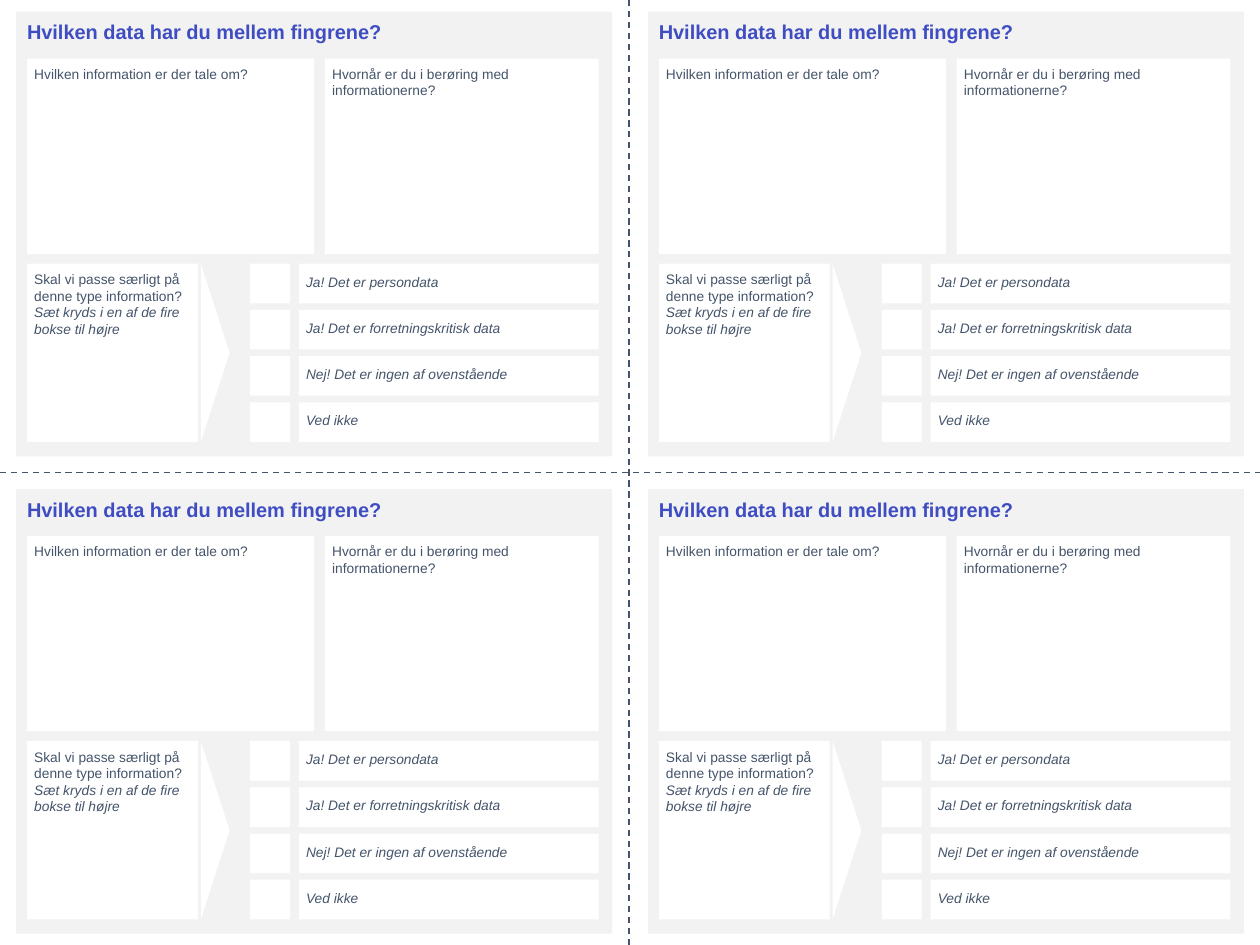
from dataclasses import dataclass
from itertools import product

from lxml import etree
from pptx import Presentation
from pptx.dml.color import RGBColor
from pptx.enum.dml import MSO_LINE
from pptx.enum.shapes import MSO_CONNECTOR, MSO_SHAPE
from pptx.enum.text import MSO_ANCHOR, MSO_AUTO_SIZE, PP_ALIGN
from pptx.oxml.ns import qn
from pptx.util import Inches, Pt

RECT = MSO_SHAPE.RECTANGLE
TRIANGLE = MSO_SHAPE.ISOSCELES_TRIANGLE
STRAIGHT = MSO_CONNECTOR.STRAIGHT
DASH = MSO_LINE.DASH
TOP, MIDDLE = MSO_ANCHOR.TOP, MSO_ANCHOR.MIDDLE
LEFT = PP_ALIGN.LEFT
GROW = MSO_AUTO_SIZE.SHAPE_TO_FIT_TEXT


@dataclass(frozen=True)
class Theme:
    """Colours, type and insets of the slide."""

    card: RGBColor = RGBColor.from_string("F3F2F2")
    field: RGBColor = RGBColor.from_string("FFFFFF")
    title: RGBColor = RGBColor.from_string("3F4DC2")
    text: RGBColor = RGBColor.from_string("44546A")
    font: str = "Arial"
    title_size: Pt = Pt(16)
    text_size: Pt = Pt(11)
    line_width: Pt = Pt(1.25)
    field_insets: tuple = (0.08, 0.08, 0.08, 0.2)
    answer_insets: tuple = (0.08, 0.16, 0.16, 0.2)


@dataclass(frozen=True)
class Box:
    """An area divided into 100 columns and 100 rows."""

    x: float
    y: float
    w: float
    h: float

    def area(self, col, row, cols, rows):
        """Return the box that covers the given columns and rows."""
        cw, rh = self.w / 100, self.h / 100
        return Box(self.x + col * cw, self.y + row * rh, cols * cw, rows * rh)

    def emu(self):
        """Return left, top, width and height as whole lengths."""
        return [round(v) for v in (self.x, self.y, self.w, self.h)]


THEME = Theme()
CARD_COLS = (1.29, 51.43)
CARD_ROWS = (1.24, 51.76)
CARD_SIZE = (47.29, 47.05)
ANSWERS = (
    "Ja! Det er persondata",
    "Ja! Det er forretningskritisk data",
    "Nej! Det er ingen af ovenstående",
    "Ved ikke",
)


def write(tf, runs, size, color, insets, anchor=TOP, bold=False):
    """Fill a text frame with (text, italic) runs."""
    tf.word_wrap = True
    tf.vertical_anchor = anchor
    tf.margin_left, tf.margin_top, tf.margin_right, tf.margin_bottom = map(Inches, insets)
    p = tf.paragraphs[0]
    p.alignment = LEFT
    for text, italic in runs:
        r = p.add_run()
        r.text = text
        r.font.name = THEME.font
        r.font.size = size
        r.font.color.rgb = color
        r.font.bold = bold
        r.font.italic = italic


def add_panel(s, box, color=THEME.field, kind=RECT):
    """Add a plain filled shape without outline."""
    sp = s.shapes.add_shape(kind, *box.emu())
    sp.shadow.inherit = False
    sp.fill.solid()
    sp.fill.fore_color.rgb = color
    sp.line.fill.background()
    return sp


def add_field(s, box, runs, insets=THEME.field_insets, anchor=TOP):
    """Add a white field with its prompt."""
    sp = add_panel(s, box)
    write(sp.text_frame, runs, THEME.text_size, THEME.text, insets, anchor)


def add_title(s, box, text):
    """Add the heading of a card."""
    tf = s.shapes.add_textbox(*box.emu()).text_frame
    write(tf, [(text, False)], THEME.title_size, THEME.title, (0, 0, 0, 0), bold=True)
    tf.auto_size = GROW


def add_pointer(s, box):
    """Add a triangle that fills the box and points right."""
    turned = Box(box.x + (box.w - box.h) / 2, box.y + (box.h - box.w) / 2, box.h, box.w)
    add_panel(s, turned, kind=TRIANGLE).rotation = 90


def add_answers(s, box):
    """Add a tick box and a label for each answer, spread evenly down the box."""
    rows = 22.22
    pitch = (100 - rows) / (len(ANSWERS) - 1)
    for i, answer in enumerate(ANSWERS):
        add_panel(s, box.area(0, i * pitch, 11.37, rows))
        label = box.area(13.95, i * pitch, 86.05, rows)
        add_field(s, label, [(answer, True)], THEME.answer_insets, MIDDLE)


def add_card(s, box):
    """Add one question card."""
    add_panel(s, box, THEME.card)
    add_title(s, box.area(1.81, 1.82, 64.95, 5.47), "Hvilken data har du mellem fingrene?")
    add_field(s, box.area(1.81, 10.53, 48.19, 43.93),
              [("Hvilken information er der tale om?", False)])
    add_field(s, box.area(51.81, 10.53, 45.92, 43.93),
              [("Hvornår er du i berøring med informationerne?", False)])
    add_field(s, box.area(1.81, 56.68, 28.7, 40.08),
              [("Skal vi passe særligt på denne type information? ", False),
               ("Sæt kryds i en af de fire bokse til højre", True)])
    add_pointer(s, box.area(30.97, 56.68, 4.83, 40.08))
    add_answers(s, box.area(39.27, 56.68, 58.46, 40.08))


def add_cut_line(s, box):
    """Add a dashed line from the start to the end of a box."""
    x, y, w, h = box.emu()
    line = s.shapes.add_connector(STRAIGHT, x, y, x + w, y + h)
    line.line.color.rgb = THEME.text
    line.line.width = THEME.line_width
    line.line.dash_style = DASH
    etree.SubElement(line._element.spPr, qn("a:effectLst"))


def main():
    """Build the sheet of four cards."""
    prs = Presentation()
    prs.slide_width, prs.slide_height = Inches(14), Inches(10.5)
    s = prs.slides.add_slide(prs.slide_layouts[6])
    page = Box(0, 0, prs.slide_width, prs.slide_height)
    for row, col in product(CARD_ROWS, CARD_COLS):
        add_card(s, page.area(col, row, *CARD_SIZE))
    add_cut_line(s, page.area(0, 50, 100, 0))
    add_cut_line(s, page.area(49.93, 100, 0, -100))
    prs.save("out.pptx")


if __name__ == "__main__":
    main()
